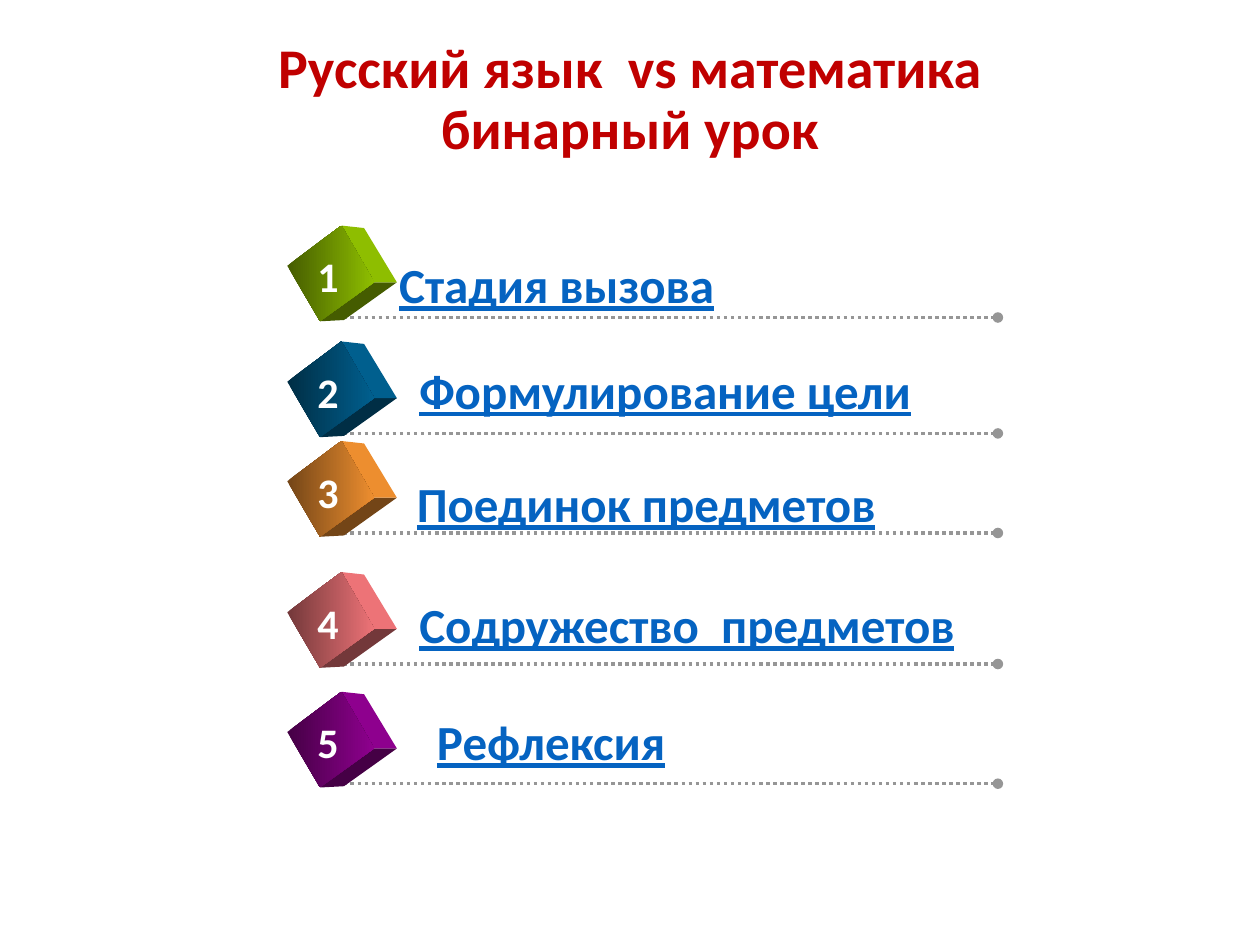
from dataclasses import dataclass

from lxml import etree
from pptx import Presentation
from pptx.dml.color import RGBColor
from pptx.enum.dml import MSO_LINE
from pptx.enum.shapes import MSO_CONNECTOR
from pptx.enum.text import MSO_ANCHOR, PP_ALIGN
from pptx.oxml.ns import qn
from pptx.util import Inches, Pt

STRAIGHT = MSO_CONNECTOR.STRAIGHT
DOTTED = MSO_LINE.ROUND_DOT
TOP, MIDDLE = MSO_ANCHOR.TOP, MSO_ANCHOR.MIDDLE
LEFT, CENTER = PP_ALIGN.LEFT, PP_ALIGN.CENTER


@dataclass(frozen=True)
class Theme:
    font: str = "Calibri"
    title: str = "C00000"
    link: str = "0563C1"
    number: str = "FFFFFF"
    rule: str = "969696"
    title_size: int = 32
    label_size: int = 28
    number_size: int = 24
    lit: float = 0.93
    dark: float = 0.45


THEME = Theme()

ROW_LEFT, ROW_WIDTH, ROW_HEIGHT = 2.28, 5.64, 0.73
ROWS = [
    (1.79, "Стадия вызова", "99CC00", 3.07, 1.97),
    (2.71, "Формулирование цели", "006699", 3.23, 2.81),
    (3.50, "Поединок предметов", "FF9933", 3.21, 3.71),
    (4.54, "Содружество  предметов", "FF7C80", 3.23, 4.67),
    (5.49, "Рефлексия", "990099", 3.37, 5.60),
]

FRONT = [(0, 0.32), (0.43, 0), (0.69, 0.45), (0.26, 0.76)]
SIDE = [(0.43, 0), (0.61, 0.02), (0.87, 0.45), (0.69, 0.45)]
BASE = [(0.26, 0.76), (0.69, 0.45), (0.87, 0.45), (0.45, 0.75)]


def shade(color, factor):
    return RGBColor(*(round(c * factor) for c in RGBColor.from_string(color)))


def add_text(s, box, text, size, color, align=LEFT, anchor=TOP, wrap=True):
    tb = s.shapes.add_textbox(*map(Inches, box))
    tf = tb.text_frame
    tf.word_wrap = wrap
    tf.vertical_anchor = anchor
    p = tf.paragraphs[0]
    p.text = text
    p.alignment = align
    p.font.name = THEME.font
    p.font.size = Pt(size)
    p.font.bold = True
    p.font.color.rgb = RGBColor.from_string(color)
    return p


def add_title(s, box):
    p = add_text(s, box, "Русский язык  vs математика\vбинарный урок",
                 THEME.title_size, THEME.title, CENTER, MIDDLE)
    p.line_spacing = 0.9


def add_rule(s, x1, x2, y):
    line = s.shapes.add_connector(
        STRAIGHT, Inches(x1), Inches(y), Inches(x2), Inches(y))
    line.line.color.rgb = RGBColor.from_string(THEME.rule)
    line.line.width = Pt(2)
    line.line.dash_style = DOTTED
    sp_pr = line._element.spPr
    etree.SubElement(sp_pr.find(qn("a:ln")), qn("a:tailEnd"), type="oval")
    etree.SubElement(sp_pr, qn("a:effectLst"))


def add_face(s, left, top, corners):
    points = [(Inches(left + x), Inches(top + y)) for x, y in corners]
    builder = s.shapes.build_freeform(*points[0])
    builder.add_line_segments(points[1:], close=True)
    sp = builder.convert_to_shape()
    sp.shadow.inherit = False
    sp.line.fill.background()
    return sp.fill


def add_cube(s, left, top, color):
    lit, dark = shade(color, THEME.lit), shade(color, THEME.dark)
    for corners, tone in ((BASE, dark), (SIDE, lit)):
        fill = add_face(s, left, top, corners)
        fill.solid()
        fill.fore_color.rgb = tone
    fill = add_face(s, left, top, FRONT)
    fill.gradient()
    fill.gradient_angle = 0
    for stop, tone, position in zip(fill.gradient_stops, (dark, lit), (0, 1)):
        stop.color.rgb = tone
        stop.position = position


def add_row(s, box, number, label, color, label_left, label_top):
    left, top, width, height = box
    add_rule(s, left + 0.39, left + width, top + height)
    add_cube(s, left, top, color)
    add_text(s, (left + 0.14, top + 0.15, 0.39, 0.5), str(number),
             THEME.number_size, THEME.number, wrap=False)
    p = add_text(s, (label_left, label_top, 5.03, 0.57), label,
                 THEME.label_size, THEME.link)
    p.font.underline = True


def main():
    prs = Presentation()
    prs.slide_width, prs.slide_height = Inches(10), Inches(7.5)
    s = prs.slides.add_slide(prs.slide_layouts[6])
    add_title(s, (0, 0.25, 10, 1.1))
    for number, (top, *content) in enumerate(ROWS, 1):
        add_row(s, (ROW_LEFT, top, ROW_WIDTH, ROW_HEIGHT), number, *content)
    prs.save("out.pptx")


if __name__ == "__main__":
    main()
